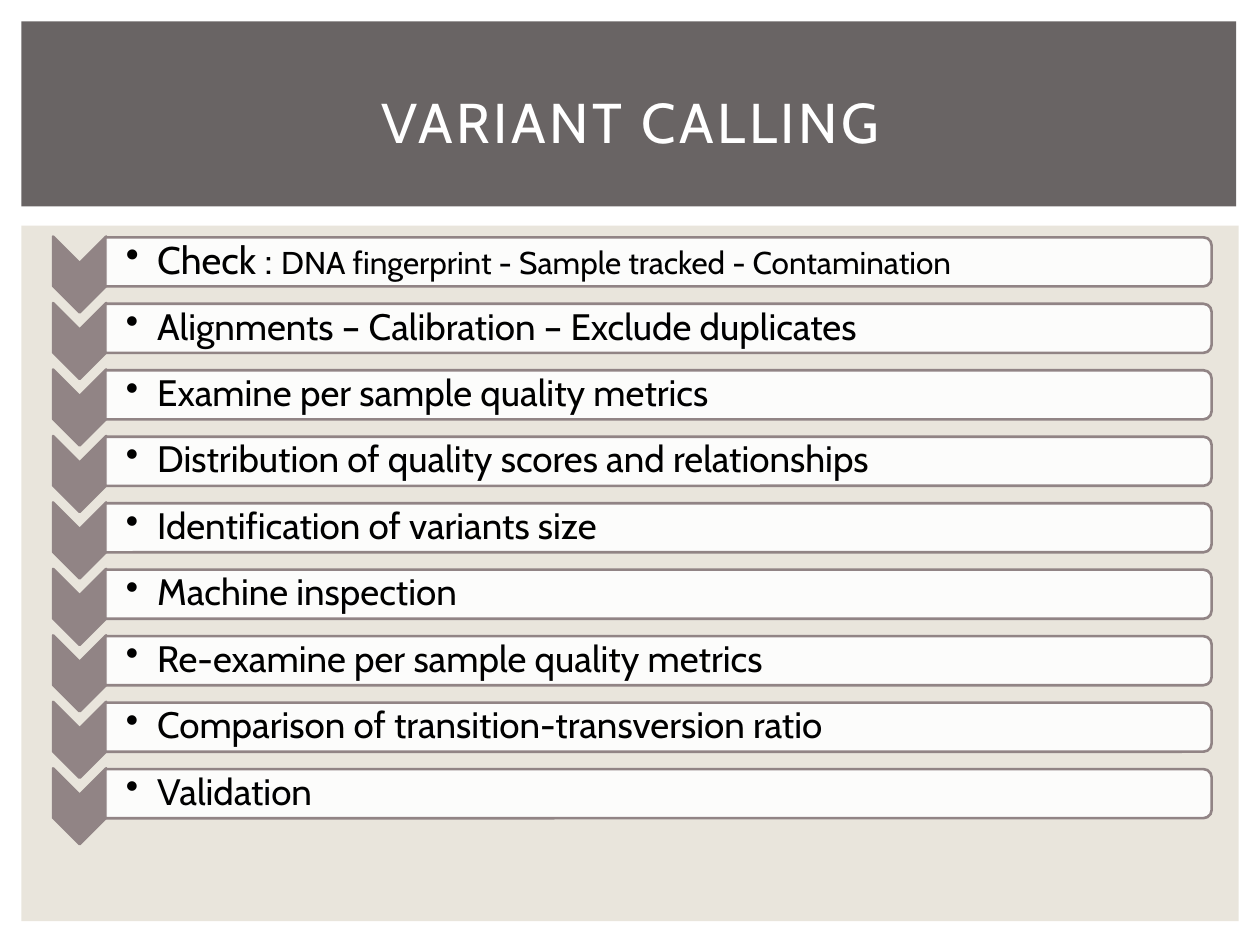
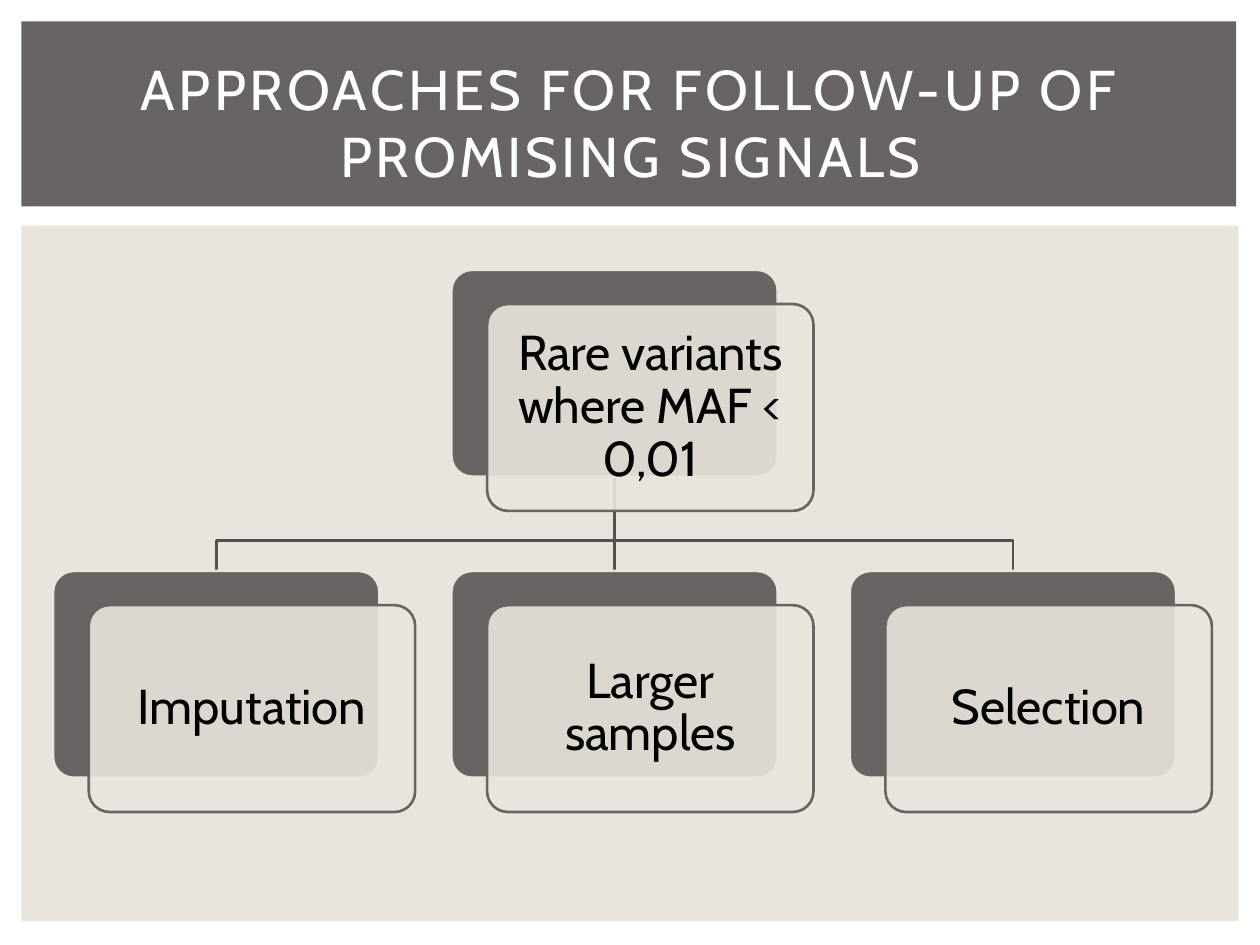
from dataclasses import dataclass
from typing import NamedTuple, Optional

from lxml import etree
from pptx import Presentation
from pptx.dml.color import RGBColor
from pptx.enum.shapes import MSO_CONNECTOR, MSO_SHAPE
from pptx.enum.text import MSO_ANCHOR, PP_ALIGN
from pptx.oxml.ns import qn
from pptx.util import Cm, Pt

RECTANGLE = MSO_SHAPE.RECTANGLE
CHEVRON = MSO_SHAPE.CHEVRON
ROUND_END = MSO_SHAPE.ROUND_2_SAME_RECTANGLE
ROUNDED = MSO_SHAPE.ROUNDED_RECTANGLE
STRAIGHT = MSO_CONNECTOR.STRAIGHT
MIDDLE = MSO_ANCHOR.MIDDLE
CENTER = PP_ALIGN.CENTER
LEFT = PP_ALIGN.LEFT


@dataclass(frozen=True)
class Theme:
    font: str = "Cabin"
    white: str = "FFFFFF"
    black: str = "000000"
    sand: str = "E9E5DC"
    slate: str = "696464"
    mauve: str = "918485"
    branch: str = "545050"
    title_size: float = 32
    card_size: float = 28
    lead_size: float = 22
    step_size: float = 21
    detail_size: float = 18
    line_width: float = 1.5
    title_tracking: int = 200
    veil_opacity: int = 90


THEME = Theme()


class Area(NamedTuple):
    left: float
    top: float
    width: float
    height: float

    def lengths(self) -> list:
        return [Cm(value) for value in self]

    def moved(self, right: float, down: float) -> "Area":
        return Area(self.left + right, self.top + down, self.width, self.height)

    def inset(self, margin: float) -> "Area":
        return Area(self.left + margin, self.top + margin,
                    self.width - 2 * margin, self.height - 2 * margin)

    @property
    def middle(self) -> float:
        return self.left + self.width / 2


class Span(NamedTuple):
    text: str
    size: float
    color: str = THEME.black
    tracking: int = 0


class Style(NamedTuple):
    fill: str
    line: Optional[str] = None
    opacity: int = 100
    rotation: float = 0
    corner: Optional[float] = None


CONTENT_PANEL = Area(0.43, 4.55, 24.54, 14.02)
TITLE_BAND = Area(0.43, 0.43, 24.49, 3.73)
TITLE_AREA = Area(1.07, 0.99, 23.29, 2.92)
TITLE_MARGINS = (0.25, 0.13, 0.25, 0.13)

STEP_PITCH = 1.34
STEP_CHEVRON = Area(0.84, 5.0, 1.53, 1.07)
STEP_BAR = Area(12.78, -5.87, 0.99, 22.3)
STEP_TEXT = Area(2.13, 4.83, 22.25, 0.89)
STEP_MARGINS = (0.41, 0.03, 0.03, 0.03)
BULLET_INDENT = 0.63
CHEVRON_STYLE = Style(THEME.mauve, THEME.mauve, rotation=90)
BAR_STYLE = Style(THEME.white, THEME.mauve, THEME.veil_opacity, rotation=90)

CARD_PITCH = 8.03
FIRST_CARD = Area(1.07, 11.51, 6.58, 4.17)
ROOT_CARD = FIRST_CARD.moved(CARD_PITCH, -6.07)
BRANCH_HEIGHT = 10.9
FRONT_SHIFT = (0.72, 0.69)
CARD_MARGINS = (0.31,) * 4
BACK_STYLE = Style(THEME.slate, THEME.sand, corner=0.1)
FRONT_STYLE = Style(THEME.sand, THEME.slate, THEME.veil_opacity, corner=0.1)

CALLING_STEPS = [
    [Span("Check : ", THEME.lead_size),
     Span("DNA fingerprint - Sample tracked - Contamination", THEME.detail_size)],
] + [
    [Span(text, THEME.step_size)]
    for text in (
        "Alignments – Calibration – Exclude duplicates",
        "Examine per sample quality metrics",
        "Distribution of quality scores and relationships",
        "Identification of variants size",
        "Machine inspection",
        "Re-examine per sample quality metrics",
        "Comparison of transition-transversion ratio",
        "Validation",
    )
]
FOLLOW_UPS = ("Imputation", "Larger samples", "Selection")


def color(value: str) -> RGBColor:
    return RGBColor.from_string(value)


def add_figure(page, kind, area: Area, style: Style) -> None:
    figure = page.shapes.add_shape(kind, *area.lengths())
    figure.shadow.inherit = False
    figure.rotation = style.rotation
    figure.fill.solid()
    figure.fill.fore_color.rgb = color(style.fill)
    if style.opacity < 100:
        tint = figure.fill._xPr.find(qn("a:solidFill"))[0]
        etree.SubElement(tint, qn("a:alpha"), val=str(style.opacity * 1000))
    if style.line:
        figure.line.color.rgb = color(style.line)
        figure.line.width = Pt(THEME.line_width)
    else:
        figure.line.fill.background()
    if style.corner is not None:
        figure.adjustments[0] = style.corner


def add_bullet(para) -> None:
    properties = para._p.get_or_add_pPr()
    properties.set("marL", str(Cm(BULLET_INDENT)))
    properties.set("indent", str(-Cm(BULLET_INDENT)))
    etree.SubElement(properties, qn("a:buChar"), char="•")


def add_text(page, area: Area, spans: list, margins: tuple,
             align=CENTER, spacing: float = 0.9, bullet: bool = False) -> None:
    frame = page.shapes.add_textbox(*area.lengths()).text_frame
    frame.word_wrap = True
    frame.vertical_anchor = MIDDLE
    (frame.margin_left, frame.margin_top,
     frame.margin_right, frame.margin_bottom) = map(Cm, margins)
    para = frame.paragraphs[0]
    para.alignment = align
    para.line_spacing = spacing
    if bullet:
        add_bullet(para)
    for span in spans:
        run = para.add_run()
        run.text = span.text
        run.font.name = THEME.font
        run.font.size = Pt(span.size)
        run.font.color.rgb = color(span.color)
        if span.tracking:
            run.font._element.set("spc", str(span.tracking))


def add_page(deck, title: str):
    page = deck.slides.add_slide(deck.slide_layouts[6])
    page.background.fill.solid()
    page.background.fill.fore_color.rgb = color(THEME.white)
    add_figure(page, RECTANGLE, CONTENT_PANEL, Style(THEME.sand))
    add_figure(page, RECTANGLE, TITLE_BAND, Style(THEME.slate))
    heading = Span(title, THEME.title_size, THEME.white, THEME.title_tracking)
    add_text(page, TITLE_AREA, [heading], TITLE_MARGINS, spacing=1.0)
    return page


def add_step(page, index: int, spans: list) -> None:
    down = index * STEP_PITCH
    add_figure(page, CHEVRON, STEP_CHEVRON.moved(0, down), CHEVRON_STYLE)
    add_figure(page, ROUND_END, STEP_BAR.moved(0, down), BAR_STYLE)
    add_text(page, STEP_TEXT.moved(0, down), spans, STEP_MARGINS,
             align=LEFT, bullet=True)


def add_branch(page, parent: Area, child: Area) -> None:
    start = (Cm(parent.middle), Cm(parent.top + parent.height))
    end = (Cm(child.middle), Cm(child.top))
    if start[0] == end[0]:
        branch = page.shapes.add_connector(STRAIGHT, *start, *end)
        etree.SubElement(branch._element.spPr, qn("a:effectLst"))
    else:
        outline = page.shapes.build_freeform(*start)
        bend = Cm(BRANCH_HEIGHT)
        outline.add_line_segments([(start[0], bend), (end[0], bend), end], close=False)
        branch = outline.convert_to_shape()
        branch.shadow.inherit = False
        branch.fill.background()
    branch.line.color.rgb = color(THEME.branch)
    branch.line.width = Pt(THEME.line_width)


def add_card(page, area: Area, text: str) -> None:
    front = area.moved(*FRONT_SHIFT)
    add_figure(page, ROUNDED, area, BACK_STYLE)
    add_figure(page, ROUNDED, front, FRONT_STYLE)
    add_text(page, front.inset(0.12), [Span(text, THEME.card_size)], CARD_MARGINS)


def build_calling_page(deck) -> None:
    page = add_page(deck, "VARIANT CALLING")
    for index, spans in enumerate(CALLING_STEPS):
        add_step(page, index, spans)


def build_follow_up_page(deck) -> None:
    page = add_page(deck, "APPROACHES FOR FOLLOW-UP OF PROMISING SIGNALS")
    cards = [FIRST_CARD.moved(index * CARD_PITCH, 0) for index in range(len(FOLLOW_UPS))]
    for card in cards:
        add_branch(page, ROOT_CARD, card)
    add_card(page, ROOT_CARD, "Rare variants where MAF < 0,01")
    for card, text in zip(cards, FOLLOW_UPS):
        add_card(page, card, text)


def main() -> None:
    deck = Presentation()
    deck.slide_width = Cm(25.4)
    deck.slide_height = Cm(19.05)
    build_calling_page(deck)
    build_follow_up_page(deck)
    deck.save("out.pptx")


if __name__ == "__main__":
    main()
